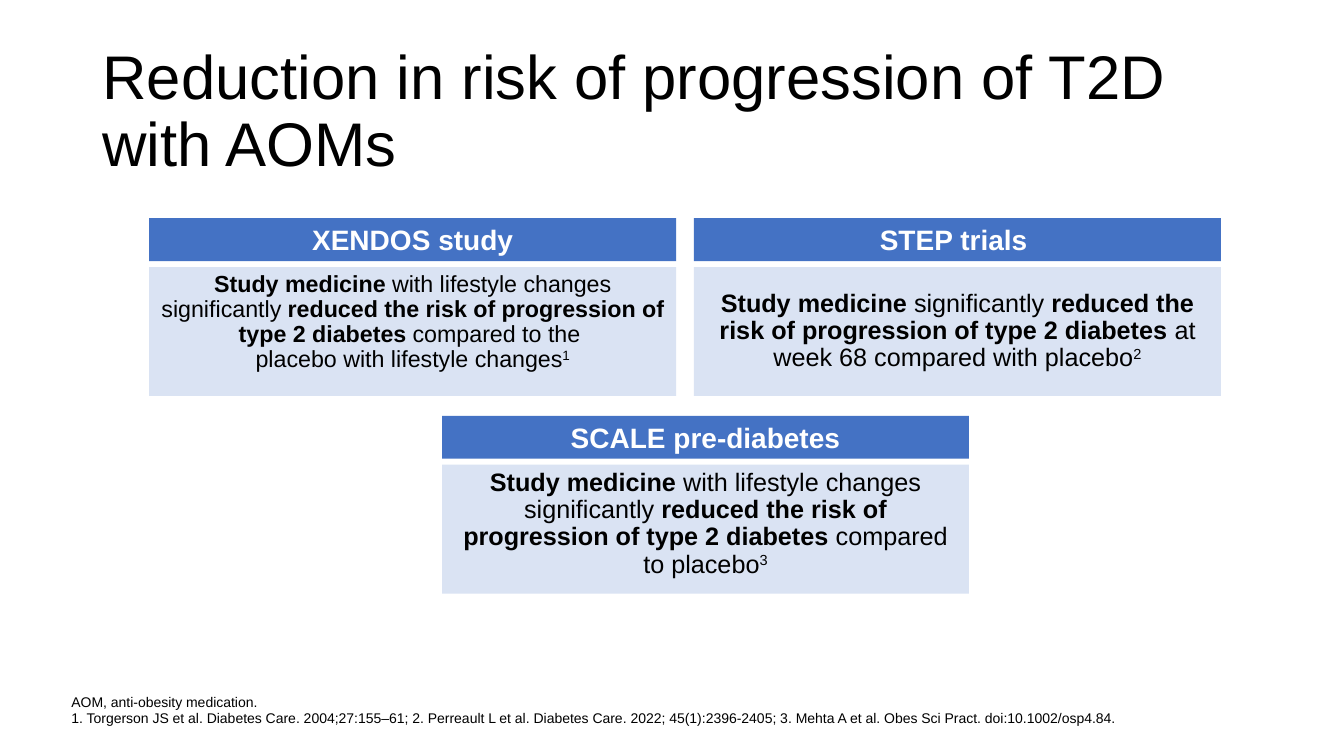
"""Build the slide on progression of T2D with anti-obesity medications."""
from dataclasses import dataclass

from pptx import Presentation
from pptx.dml.color import RGBColor
from pptx.enum.shapes import MSO_SHAPE
from pptx.enum.text import MSO_ANCHOR, PP_ALIGN
from pptx.util import Cm, Pt

RECTANGLE = MSO_SHAPE.RECTANGLE
TOP, MIDDLE, BOTTOM = MSO_ANCHOR.TOP, MSO_ANCHOR.MIDDLE, MSO_ANCHOR.BOTTOM
CENTER = PP_ALIGN.CENTER

CARD_WIDTH, HEADER_HEIGHT, BODY_HEIGHT = 13.28, 1.08, 3.25
BODY_OFFSET = 1.23
CARD_LEFT, CARD_TOP = 3.76, 5.5
COLUMN_STEP, ROW_STEP = 13.73, 4.98
LAST_CARD_LEFT = 11.14

BOLD, PLAIN, SUPERSCRIPT = "bold", "plain", "superscript"

STUDIES = [
    ("XENDOS study", CARD_LEFT, CARD_TOP, 16.6, TOP, [
        ("Study medicine", BOLD),
        (" with lifestyle changes significantly ", PLAIN),
        ("reduced the risk of progression of type 2 diabetes ", BOLD),
        ("compared to the \vplacebo with lifestyle changes", PLAIN),
        ("1", SUPERSCRIPT)]),
    ("STEP trials ", CARD_LEFT + COLUMN_STEP, CARD_TOP, 18, MIDDLE, [
        ("Study medicine ", BOLD),
        ("significantly", PLAIN),
        (" reduced the risk of progression of type 2 diabetes ", BOLD),
        ("at week 68 compared with placebo", PLAIN),
        ("2", SUPERSCRIPT)]),
    ("SCALE pre-diabetes", LAST_CARD_LEFT, CARD_TOP + ROW_STEP, 18, TOP, [
        ("Study medicine", BOLD),
        (" with lifestyle changes significantly ", PLAIN),
        ("reduced the risk of progression of type 2 diabetes ", BOLD),
        ("compared to placebo", PLAIN),
        ("3", SUPERSCRIPT)]),
]

REFERENCES = (
    "AOM, anti-obesity medication. \v"
    "1. Torgerson JS et al. Diabetes Care. 2004;27:155–61; "
    "2. Perreault L et al. Diabetes Care. 2022; 45(1):2396-2405; "
    "3. Mehta A et al. Obes Sci Pract. doi:10.1002/osp4.84."
)


@dataclass(frozen=True)
class Theme:
    """Colours, font and type sizes of the slide."""
    font: str = "Arial"
    text: RGBColor = RGBColor(0x00, 0x00, 0x00)
    header_text: RGBColor = RGBColor(0xFF, 0xFF, 0xFF)
    header_fill: RGBColor = RGBColor(0x44, 0x72, 0xC4)
    body_fill: RGBColor = RGBColor(0xDA, 0xE3, 0xF3)
    title_size: float = 44
    header_size: float = 20
    reference_size: float = 10


class SlideBuilder:
    """Draw styled elements on one slide."""

    def __init__(self, slide, theme):
        self.slide = slide
        self.theme = theme

    def format_run(self, run, size, color, bold=False):
        """Apply font, size, colour and weight to a run."""
        run.font.name = self.theme.font
        run.font.size = Pt(size)
        run.font.color.rgb = color
        run.font.bold = bold

    def text_box(self, text, left, top, width, height, size, anchor, inset=None):
        """Add a wrapped text box."""
        box = self.slide.shapes.add_textbox(Cm(left), Cm(top), Cm(width), Cm(height))
        frame = box.text_frame
        frame.word_wrap = True
        frame.vertical_anchor = anchor
        if inset is not None:
            frame.margin_left = frame.margin_right = Cm(inset)
            frame.margin_top = frame.margin_bottom = Cm(inset)
        paragraph = frame.paragraphs[0]
        paragraph.text = text
        paragraph.line_spacing = 0.9
        for run in paragraph.runs:
            self.format_run(run, size, self.theme.text)

    def panel(self, left, top, height, fill, anchor):
        """Add a filled rectangle and return its centred paragraph."""
        shape = self.slide.shapes.add_shape(
            RECTANGLE, Cm(left), Cm(top), Cm(CARD_WIDTH), Cm(height))
        shape.shadow.inherit = False
        shape.fill.solid()
        shape.fill.fore_color.rgb = fill
        shape.line.fill.background()
        frame = shape.text_frame
        frame.word_wrap = True
        frame.vertical_anchor = anchor
        frame.margin_left = frame.margin_right = Cm(0.25)
        paragraph = frame.paragraphs[0]
        paragraph.alignment = CENTER
        return paragraph

    def rich_text(self, paragraph, parts, size):
        """Fill a paragraph with bold, plain and superscript parts."""
        for text, style in parts:
            for index, line in enumerate(text.split("\v")):
                if index:
                    paragraph.add_line_break()
                run = paragraph.add_run()
                run.text = line
                self.format_run(run, size, self.theme.text, style == BOLD)
                if style == SUPERSCRIPT:
                    run._r.get_or_add_rPr().set("baseline", "30000")

    def study_card(self, name, left, top, size, anchor, parts):
        """Add a study's header and its finding below."""
        header = self.panel(left, top, HEADER_HEIGHT, self.theme.header_fill, MIDDLE)
        header.text = name
        self.format_run(header.runs[0], self.theme.header_size,
                        self.theme.header_text, True)
        finding = self.panel(left, top + BODY_OFFSET, BODY_HEIGHT,
                             self.theme.body_fill, anchor)
        finding.line_spacing = 0.9
        finding.space_before = Pt(10)
        self.rich_text(finding, parts, size)


def main():
    """Create and save the presentation."""
    presentation = Presentation()
    presentation.slide_width = Cm(33.87)
    presentation.slide_height = Cm(19.05)
    slide = presentation.slides.add_slide(presentation.slide_layouts[6])
    theme = Theme()
    builder = SlideBuilder(slide, theme)
    builder.text_box("Reduction in risk of progression of T2D with AOMs",
                     2.33, 1.01, 29.21, 3.68, theme.title_size, MIDDLE)
    for study in STUDIES:
        builder.study_card(*study)
    builder.text_box(REFERENCES, 1.8, 17.4, 29.74, 0.9,
                     theme.reference_size, BOTTOM, inset=0)
    presentation.save("out.pptx")


if __name__ == "__main__":
    main()
